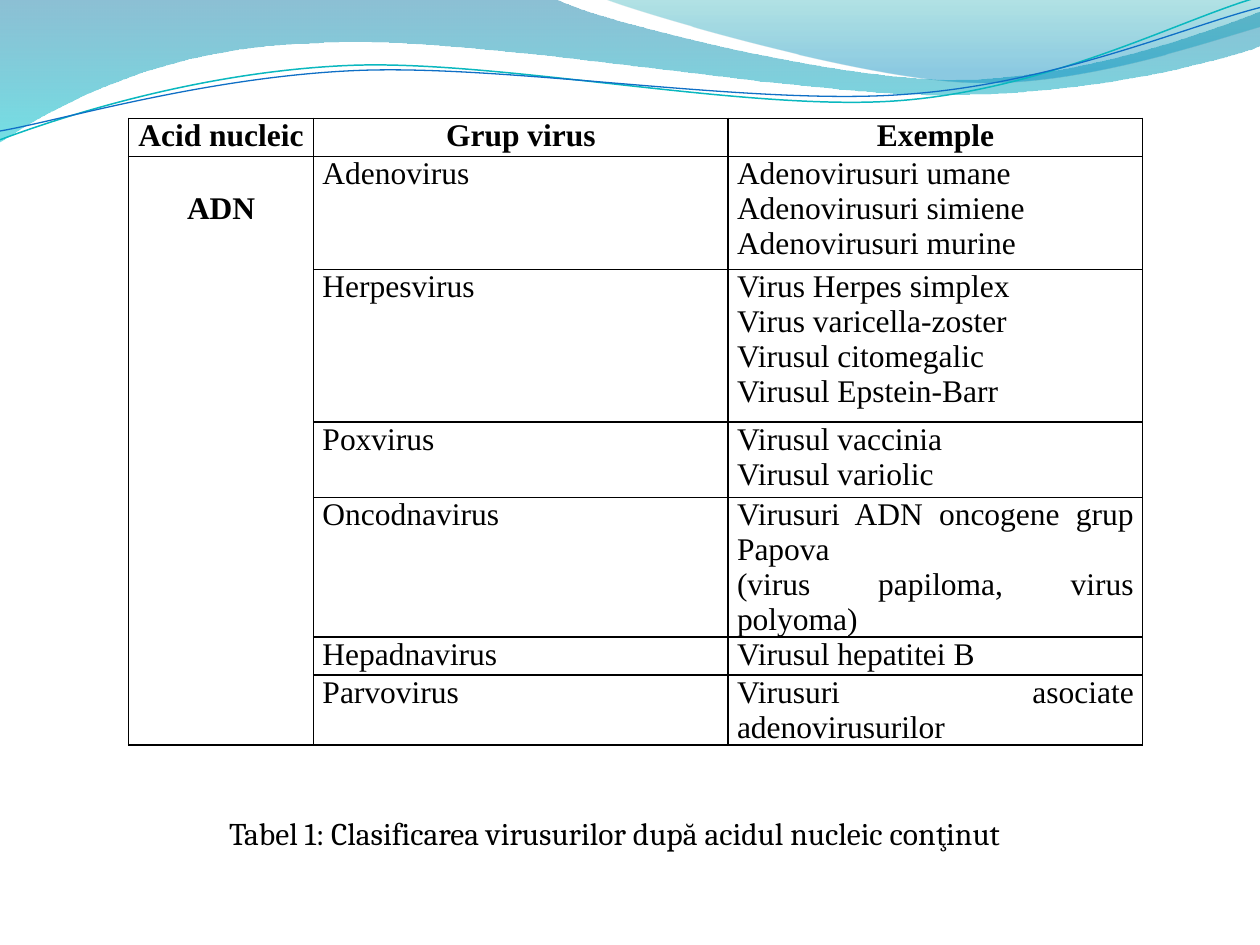
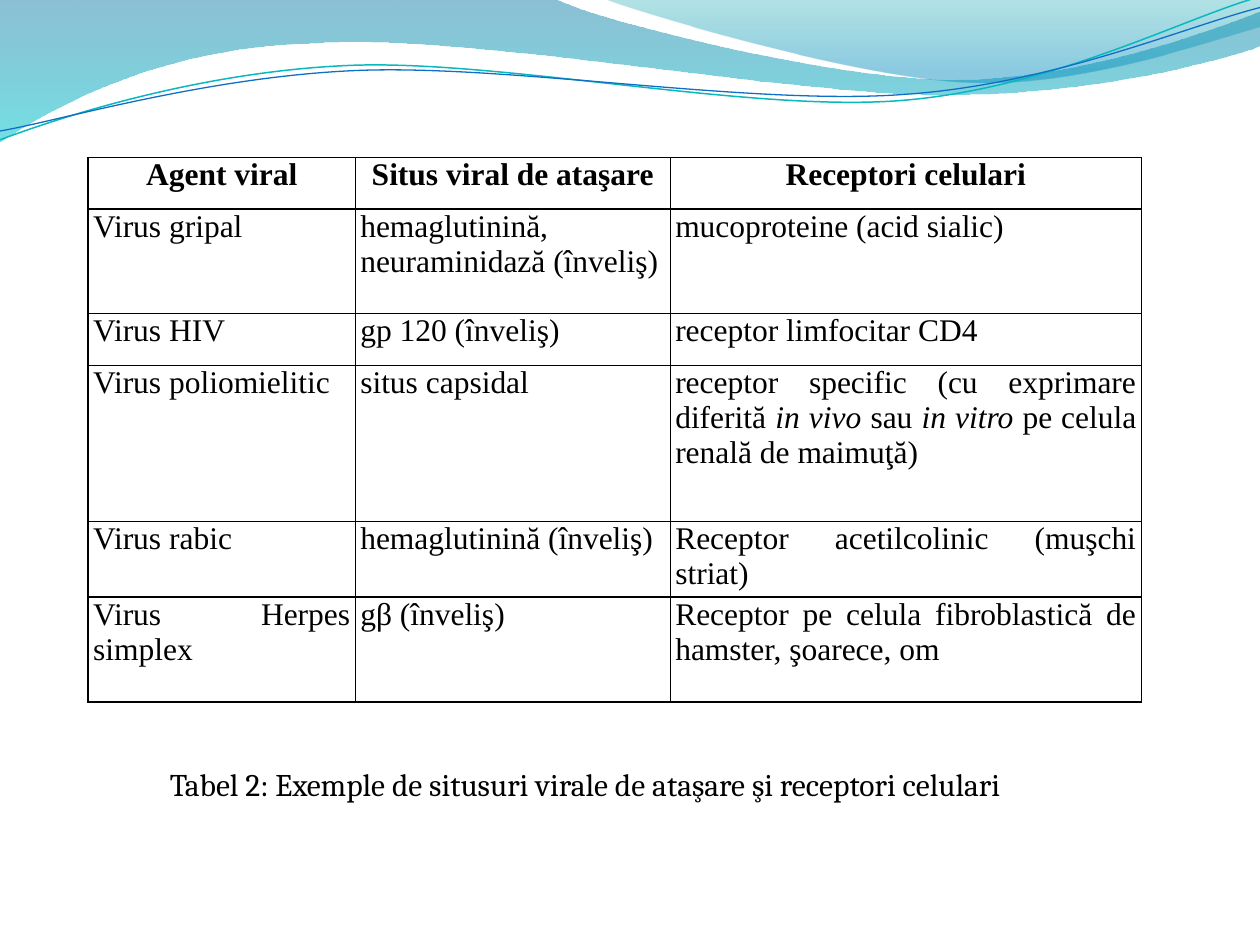
from dataclasses import dataclass
from lxml.etree import SubElement
from pptx import Presentation
from pptx.dml.color import RGBColor
from pptx.enum.text import MSO_ANCHOR, PP_ALIGN as Align
from pptx.oxml import parse_xml
from pptx.oxml.ns import nsdecls, qn
from pptx.util import Inches, Pt


@dataclass(frozen=True)
class Theme:
    ink: str = "000000"
    table_font: str = "Times New Roman"
    caption_font: str = "Cambria"
    size: int = 18
    border: int = 1


THEME = Theme()

# Content: cell lines are split by "\n", italics stand between asterisks
TABLES = [
    dict(
        at=(1.02, 0.94, 8.05, 5.11), inset=0.07,
        columns=[1.47, 3.29, 3.29],
        heights=[0.3, 0.9, 1.21, 0.6, 0.6, 0.3, 0.3],
        rows=[
            ("Acid nucleic", "Grup virus", "Exemple"),
            ("ADN", "Adenovirus",
             "Adenovirusuri umane\nAdenovirusuri simiene\nAdenovirusuri murine"),
            ("", "Herpesvirus",
             "Virus Herpes simplex\nVirus varicella-zoster\n"
             "Virusul citomegalic\nVirusul Epstein-Barr"),
            ("", "Poxvirus", "Virusul vaccinia\nVirusul variolic"),
            ("", "Oncodnavirus",
             "Virusuri ADN oncogene grup Papova \n(virus papiloma, virus polyoma)"),
            ("", "Hepadnavirus", "Virusul hepatitei B"),
            ("", "Parvovirus", "Virusuri asociate adenovirusurilor"),
        ],
        group_column=True,
        caption="Tabel 1: Clasificarea virusurilor după acidul nucleic conţinut",
        caption_at=(1.72, 6.41, 6.72, 0.71),
    ),
    dict(
        at=(0.7, 1.25, 8.36, 4.33), inset=0.04,
        columns=[2.12, 2.5, 3.74],
        heights=[0.41, 0.83, 0.41, 1.24, 0.41, 0.83],
        rows=[
            ("Agent viral", "Situs viral de ataşare", "Receptori celulari"),
            ("Virus gripal", "hemaglutinină, \nneuraminidază (înveliş)",
             "mucoproteine (acid sialic)"),
            ("Virus HIV", "gp 120 (înveliş)", "receptor limfocitar CD4"),
            ("Virus poliomielitic", "situs capsidal",
             "receptor specific (cu exprimare diferită *in vivo *sau *in vitro*"
             " pe celula renală de maimuţă)"),
            ("Virus rabic", "hemaglutinină (înveliş)",
             "Receptor acetilcolinic (muşchi striat)"),
            ("Virus Herpes simplex", "gβ (înveliş)",
             "Receptor pe celula fibroblastică de hamster, şoarece, om"),
        ],
        group_column=False,
        caption="Tabel 2: Exemple de situsuri virale de ataşare şi receptori celulari",
        caption_at=(1.25, 6.02, 7.34, 0.71),
    ),
]

# Header waves: a pair is a straight step, six numbers are a Bezier step;
# gradient stops are (position, colour, opacity)
WAVES = [
    dict(start=(0, 0), steps=[
        (4.4, -0.01), (4.76, 0.17, 6.64, 0.63, 7.58, 0.63),
        (8.53, 0.63, 9.58, 0.26, 10, 0.09), (10.01, 0.36),
        (9.83, 0.44, 8.7, 0.76, 7.46, 0.75),
        (6.22, 0.75, 3.82, 0.28, 2.57, 0.34),
        (1.29, 0.36, 0.46, 0.83, -0.01, 1.13), (0, 0)],
        stops=[(0, "0074A1", 45), (1, "00C6CF", 55)]),
    dict(start=(4.79, -0.01), steps=[
        (5.09, 0.11, 6.82, 0.62, 7.69, 0.65),
        (8.56, 0.69, 9.61, 0.32, 10, 0.21), (10, 0), (4.79, -0.01)],
        stops=[(0, "00A1A9", 30), (0.8, "008BBF", 45)]),
    dict(start=(0, 1.11), steps=[
        (0.48, 0.93, 1.58, 0.57, 2.77, 0.52),
        (3.95, 0.47, 5.93, 0.89, 7.13, 0.8),
        (8.33, 0.71, 9.38, 0.15, 9.98, -0.02)], line=("0AB8BF", 0.85)),
    dict(start=(0, 1.04), steps=[
        (0.47, 0.96, 1.64, 0.61, 2.83, 0.56),
        (4.03, 0.51, 5.97, 0.84, 7.17, 0.75),
        (8.36, 0.67, 9.41, 0.21, 10, 0.06)], line=("0F6FC6", 0.75)),
]


def put_text(frame, text, font=THEME.table_font, bold=False, align=Align.LEFT):
    frame.word_wrap = True
    for number, line in enumerate(text.split("\n")):
        paragraph = frame.add_paragraph() if number else frame.paragraphs[0]
        paragraph.alignment = align
        for part, words in enumerate(line.split("*")):
            run = paragraph.add_run()
            run.text = words
            run.font.name, run.font.size = font, Pt(THEME.size)
            run.font.bold, run.font.italic = bold, part % 2 == 1
            run.font.color.rgb = RGBColor.from_string(THEME.ink)


# Header waves
def bend(wave, steps):
    """Join the three points of each Bezier step into one curve."""
    segments = iter(list(wave.element.iter(qn("a:lnTo"))))
    for step in steps:
        segment = next(segments)
        if len(step) == 6:
            segment.tag = qn("a:cubicBezTo")
            for _ in range(2):
                control = next(segments)
                segment.append(control[0])
                control.getparent().remove(control)


def draw_wave(shapes, start, steps, stops=None, line=None):
    points = [(Inches(step[i]), Inches(step[i + 1]))
              for step in steps for i in range(0, len(step), 2)]
    builder = shapes.build_freeform(*map(Inches, start))
    builder.add_line_segments(points, close=stops is not None)
    wave = builder.convert_to_shape()
    bend(wave, steps)
    wave.shadow.inherit = False
    if line:
        color, width = line
        wave.fill.background()
        wave.line.color.rgb = RGBColor.from_string(color)
        wave.line.width = Pt(width)
        return wave
    wave.line.fill.background()
    wave.fill.gradient()
    wave.fill.gradient_angle = 270
    for stop, (position, color, _) in zip(wave.fill.gradient_stops, stops):
        stop.position = position
        stop.color.rgb = RGBColor.from_string(color)
    for tint, (_, _, opacity) in zip(wave.element.iter(qn("a:srgbClr")), stops):
        SubElement(tint, qn("a:alpha"), val=str(opacity * 1000))
    return wave


# Tables
def set_borders(cell):
    properties = cell._tc.get_or_add_tcPr()
    for place, side in enumerate("LRTB"):
        properties.insert(place, parse_xml(
            f'<a:ln{side} {nsdecls("a")} w="{Pt(THEME.border)}"><a:solidFill>'
            f'<a:srgbClr val="{THEME.ink}"/></a:solidFill></a:ln{side}>'))


def draw_table(shapes, at, inset, columns, heights, rows, group_column):
    holder = shapes.add_table(len(rows), len(columns), *map(Inches, at))
    table = holder.table
    table.first_row = table.horz_banding = False
    for column, width in zip(table.columns, columns):
        column.width = Inches(width)
    for row, height in zip(table.rows, heights):
        row.height = Inches(height)
    # Changing the rows resizes the holder, so its size is set last
    holder.width, holder.height = map(Inches, at[2:])
    for r, row in enumerate(rows):
        for c, text in enumerate(row):
            cell = table.cell(r, c)
            group = group_column and c == 0 and r > 0
            heading = r == 0 or group
            cell.margin_left = cell.margin_right = Inches(inset)
            cell.margin_top = Inches(0.28 if group and text else 0)
            cell.margin_bottom = 0
            cell.vertical_anchor = MSO_ANCHOR.TOP
            cell.fill.background()
            set_borders(cell)
            if text:
                put_text(cell.text_frame, text, bold=heading,
                         align=Align.CENTER if heading else Align.JUSTIFY)
    if group_column:
        table.cell(1, 0).merge(table.cell(len(rows) - 1, 0))


def main():
    deck = Presentation()
    deck.slide_width, deck.slide_height = Inches(10), Inches(7.5)
    layout = deck.slide_layouts[6]
    slides = [deck.slides.add_slide(layout) for _ in TABLES]

    # The waves belong to the layout that both slides share
    for wave in WAVES:
        layout.shapes.element.append(draw_wave(slides[0].shapes, **wave).element)

    for slide, content in zip(slides, TABLES):
        parts = dict(content)
        caption, caption_at = parts.pop("caption"), parts.pop("caption_at")
        draw_table(slide.shapes, **parts)
        caption_box = slide.shapes.add_textbox(*map(Inches, caption_at))
        put_text(caption_box.text_frame, caption, font=THEME.caption_font)
    deck.save("out.pptx")


if __name__ == "__main__":
    main()
